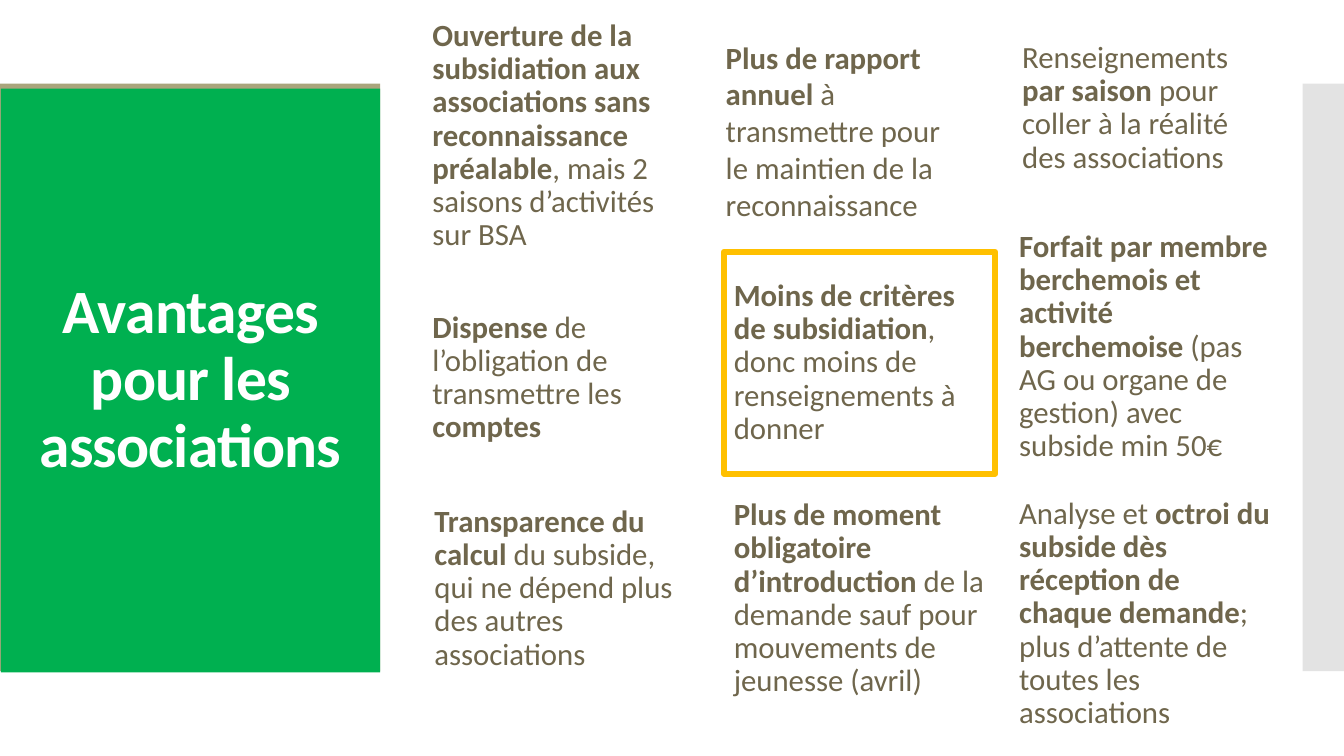
from lxml import etree
from pptx import Presentation
from pptx.dml.color import RGBColor
from pptx.enum.shapes import MSO_SHAPE
from pptx.enum.text import MSO_ANCHOR, PP_ALIGN
from pptx.oxml.ns import qn
from pptx.util import Emu, Pt

RECTANGLE = MSO_SHAPE.RECTANGLE
TOP, MIDDLE = MSO_ANCHOR.TOP, MSO_ANCHOR.MIDDLE
LEFT, CENTER = PP_ALIGN.LEFT, PP_ALIGN.CENTER

PX = 9144  # 100 px to the inch
BLANK_LAYOUT = 6
FONT = "Calibri"
COLORS = {
    "band": "A9A57C",
    "side": "C8C8C8",
    "title": "00B050",
    "white": "FFFFFF",
    "frame": "FFC000",
    "text": "6F664C",
}

# Left, top, width, height, anchor, line spacing, text with **bold** parts
ADVANTAGES = [
    (419, 17, 271, 236, MIDDLE, 0.9,
     "**Ouverture de la subsidiation aux associations sans reconnaissance "
     "préalable**, mais 2 saisons d’activités sur BSA"),
    (419, 253, 269, 244, MIDDLE, 0.9,
     "**Dispense** de l’obligation de transmettre les **comptes**"),
    (421, 474, 269, 220, MIDDLE, 0.9,
     "**Transparence du calcul** du subside, qui ne dépend plus des autres "
     "associations"),
    (710, 33, 260, 195, TOP, 1.0,
     "**Plus de rapport annuel** à transmettre pour le maintien de la "
     "reconnaissance"),
    (718, 250, 269, 220, MIDDLE, 0.9,
     "**Moins de critères de subsidiation**,\n"
     "donc moins de renseignements à donner"),
    (718, 484, 269, 220, MIDDLE, 0.9,
     "**Plus de moment obligatoire d’introduction **de la demande sauf pour "
     "mouvements de jeunesse (avril)"),
    (1004, 42, 269, 131, MIDDLE, 0.9,
     "Renseignements **par saison **pour coller à la réalité des associations"),
    (1001, 191, 269, 307, MIDDLE, 0.9,
     "**Forfait par membre berchemois et activité berchemoise **(pas AG ou "
     "organe de gestion) avec subside min 50€"),
    (1001, 499, 269, 220, MIDDLE, 0.9,
     "Analyse et **octroi du subside dès réception de chaque demande**; plus "
     "d’attente de toutes les associations"),
]
FRAME = (718, 250, 269, 220)


def color(name):
    return RGBColor.from_string(COLORS[name])


def to_emu(*lengths):
    return [Emu(length * PX) for length in lengths]


def add_panel(page, bounds, fill=None, opacity=100, line=None, line_width=0):
    panel = page.shapes.add_shape(RECTANGLE, *to_emu(*bounds))
    panel.shadow.inherit = False
    if fill:
        panel.fill.solid()
        panel.fill.fore_color.rgb = color(fill)
        if opacity < 100:
            tint = panel.fill._xPr.find(".//" + qn("a:srgbClr"))
            etree.SubElement(tint, qn("a:alpha"), val=str(opacity * 1000))
    else:
        panel.fill.background()
    if line:
        panel.line.color.rgb = color(line)
        panel.line.width = Pt(line_width)
    else:
        panel.line.fill.background()
    return panel


def write_text(box, text, size, ink, anchor, align, line_spacing):
    """Write one paragraph; ** switches bold and a newline breaks the line."""
    frame = box.text_frame
    frame.word_wrap = True
    frame.vertical_anchor = anchor
    para = frame.paragraphs[0]
    para.alignment = align
    para.line_spacing = line_spacing
    para.font.name = FONT
    para.font.size = Pt(size)
    para.font.color.rgb = color(ink)
    for index, part in enumerate(text.split("**")):
        for number, words in enumerate(part.split("\n")):
            if number:
                para.add_line_break()
            if words:
                span = para.add_run()
                span.text = words
                span.font.bold = index % 2 == 1
    return para


def add_title(page):
    panel = add_panel(page, (1, 88, 376, 579), "title")
    para = write_text(panel, "**Avantages pour les associations**", 44,
                      "white", MIDDLE, CENTER, 0.9)
    for span in para.runs:
        span._r.get_or_add_rPr().set("spc", "-60")


def add_advantage(page, left, top, width, height, anchor, line_spacing, text):
    box = page.shapes.add_textbox(*to_emu(left, top, width, height))
    write_text(box, text, 22, "text", anchor, LEFT, line_spacing)


def main():
    deck = Presentation()
    deck.slide_width, deck.slide_height = to_emu(1333, 750)
    page = deck.slides.add_slide(deck.slide_layouts[BLANK_LAYOUT])
    add_panel(page, (0, 83, 377, 583), "band")
    add_panel(page, (1292, 83, 41, 583), "side", opacity=50)
    add_title(page)
    add_panel(page, FRAME, line="frame", line_width=4.5)
    for advantage in ADVANTAGES:
        add_advantage(page, *advantage)
    deck.save("out.pptx")


if __name__ == "__main__":
    main()
